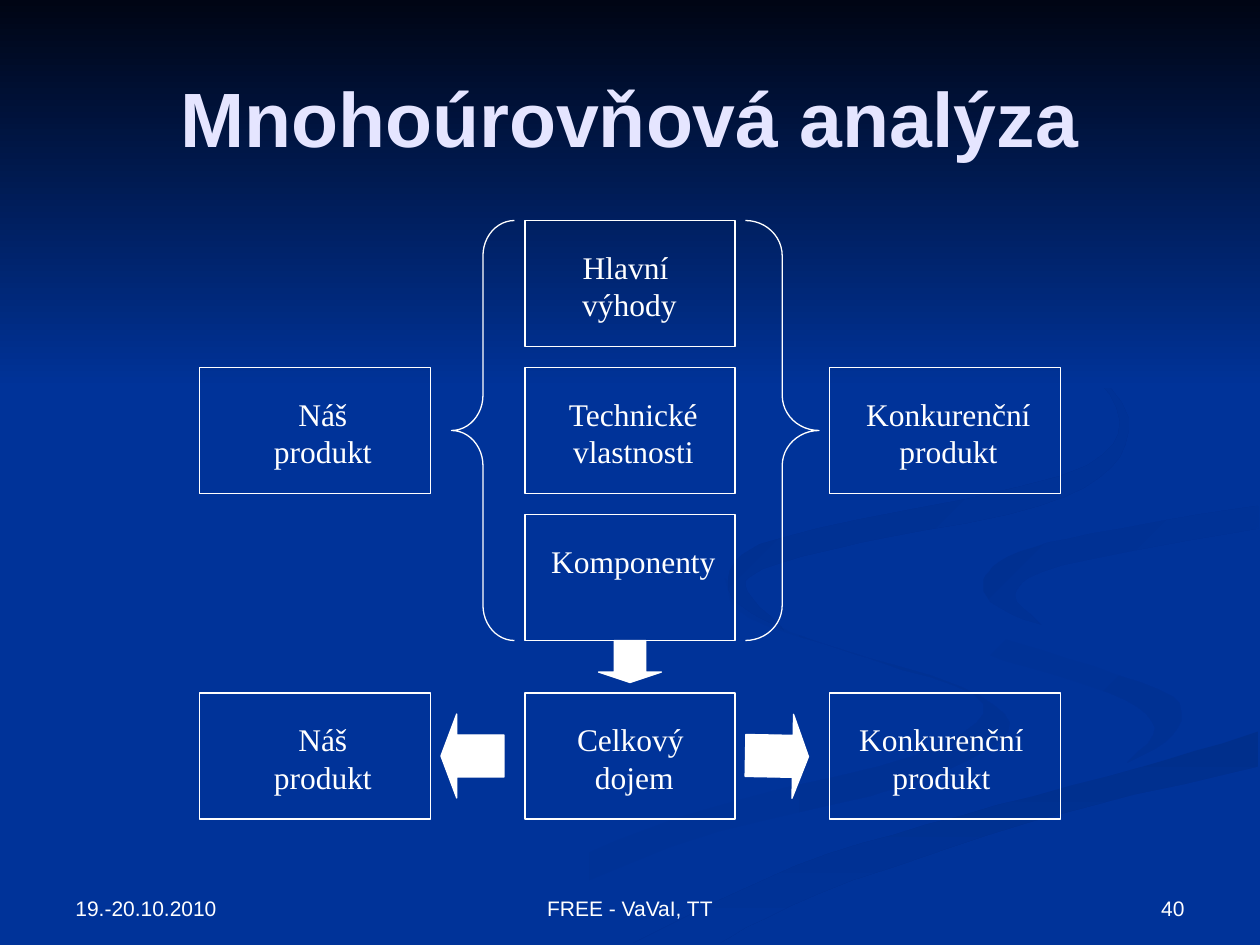
from dataclasses import dataclass

from pptx import Presentation
from pptx.dml.color import RGBColor
from pptx.enum.shapes import MSO_SHAPE
from pptx.enum.text import MSO_ANCHOR, MSO_AUTO_SIZE, PP_ALIGN
from pptx.util import Pt

RECT = MSO_SHAPE.RECTANGLE
LEFT_BRACE, RIGHT_BRACE = MSO_SHAPE.LEFT_BRACE, MSO_SHAPE.RIGHT_BRACE
DOWN_ARROW, LEFT_ARROW = MSO_SHAPE.DOWN_ARROW, MSO_SHAPE.LEFT_ARROW
LEFT, CENTER, RIGHT = PP_ALIGN.LEFT, PP_ALIGN.CENTER, PP_ALIGN.RIGHT
TOP, MIDDLE, BOTTOM = MSO_ANCHOR.TOP, MSO_ANCHOR.MIDDLE, MSO_ANCHOR.BOTTOM
GROW, FIXED = MSO_AUTO_SIZE.SHAPE_TO_FIT_TEXT, MSO_AUTO_SIZE.NONE

COLORS = {"blue": "003399", "night": "000514", "white": "FFFFFF", "title": "E5E5FF",
          "shade1": "003193", "shade2": "002F8C", "shade3": "003091", "shade4": "002F8E"}
LABEL_FONT = {"name": "Times New Roman", "size": Pt(18), "bold": False}
FOOTER_FONT = {"name": "Arial", "size": Pt(12), "bold": False}
TITLE_FONT = {"name": "Arial", "size": Pt(44), "bold": True}
PAGE_WIDTH, PAGE_HEIGHT = 720, 540
SKY_HEIGHT = 222
NODE_HEIGHT = 72
LABEL_DROP, LABEL_WIDTH = 12, 116
CURVE_STEPS = 5

Point = tuple[float, float]


@dataclass
class Ribbon:
    start: str
    end: str
    angle: int
    edges: list[list[Point]]


@dataclass
class Node:
    left: float
    top: float
    width: float
    lines: list[str]
    label_center: float


@dataclass
class Symbol:
    kind: int
    left: float
    top: float
    width: float
    height: float
    adjustments: tuple[float, float]
    filled: bool = True
    rotation: float = 0


@dataclass
class Footer:
    text: str
    left: float
    width: float
    align: int


RIBBONS = [
    Ribbon("blue", "shade1", 0, [
        [(414, 330), (428, 353), (502, 378), (562, 402), (522, 432), (388, 467), (216, 539)],
        [(260, 539), (383, 484), (519, 448), (576, 418), (548, 392), (451, 361), (414, 330)]]),
    Ribbon("blue", "shade1", 45, [
        [(521, 334), (536, 353), (612, 377), (670, 398), (670, 420), (644, 436)],
        [(644, 436), (660, 416), (634, 396), (562, 373), (528, 352), (521, 334)]]),
    Ribbon("shade2", "blue", 90, [
        [(362, 539), (454, 495), (550, 466), (650, 439), (719, 418)],
        [(719, 438), (591, 469), (467, 511), (411, 539)]]),
    Ribbon("shade3", "blue", 45, [
        [(562, 331), (566, 344), (595, 357), (580, 340), (607, 323), (719, 302)],
        [(719, 289), (623, 305), (576, 318), (562, 331)]]),
    Ribbon("shade4", "blue", 45, [
        [(492, 310), (594, 289), (640, 261), (634, 221), (549, 168)],
        [(549, 168), (609, 201), (640, 241), (606, 272), (467, 302), (424, 317), (418, 341),
         (448, 360)],
        [(448, 360), (427, 338), (436, 325), (492, 310)]]),
]
SKY = Ribbon("night", "blue", 90, [[(0, 0), (0, SKY_HEIGHT)], [(PAGE_WIDTH, SKY_HEIGHT), (PAGE_WIDTH, 0)]])

SIDE_LEFT, MIDDLE_LEFT, SIDE_RIGHT = 114, 300, 474
ROWS = (126, 210, 294, 396)
OURS = ["Náš", "produkt"]
RIVAL = ["Konkurenční", "produkt"]
NODES = [
    Node(MIDDLE_LEFT, ROWS[0], 120, ["Hlavní", " výhody"], 357.5),
    Node(MIDDLE_LEFT, ROWS[1], 120, ["Technické", "vlastnosti"], 362),
    Node(MIDDLE_LEFT, ROWS[2], 120, ["Komponenty"], 362),
    Node(MIDDLE_LEFT, ROWS[3], 120, ["Celkový ", "dojem"], 362.5),
    Node(SIDE_LEFT, ROWS[1], 132, OURS, 184.5),
    Node(SIDE_RIGHT, ROWS[1], 132, RIVAL, 542),
    Node(SIDE_LEFT, ROWS[3], 132, OURS, 184.5),
    Node(SIDE_RIGHT, ROWS[3], 132, RIVAL, 538),
]
SYMBOLS = [
    Symbol(RIGHT_BRACE, 426, 126, 42, 240, (0.48, 0.5), False),
    Symbol(LEFT_BRACE, 258, 126, 36, 240, (0.56, 0.5), False),
    Symbol(DOWN_ARROW, 342, 366, 36, 24, (0.5, 0.25)),
    Symbol(LEFT_ARROW, 252, 408, 36, 48, (0.5, 0.25)),
    Symbol(LEFT_ARROW, 426, 408, 36, 48, (0.5, 0.25), rotation=181.1),
]
FOOTERS = [
    Footer("19.-20.10.2010", 36, 168, LEFT),
    Footer("FREE - VaVaI, TT", 246, 228, CENTER),
    Footer("40", 516, 168, RIGHT),
]


def color(name: str) -> RGBColor:
    return RGBColor.from_string(COLORS[name])


def blend(a: float, b: float, c: float, d: float, t: float) -> float:
    return b + t / 2 * (c - a + t * (2 * a - 5 * b + 4 * c - d + t * (3 * (b - c) + d - a)))


def smooth_edge(edge: list[Point]) -> list[Point]:
    padded = [edge[0], *edge, edge[-1]]
    curve = [tuple(blend(*axis, step / CURVE_STEPS) for axis in zip(*padded[i:i + 4]))
             for i in range(len(edge) - 1) for step in range(CURVE_STEPS)]
    return curve + [edge[-1]]


def write(box, lines: list[str], font: dict, ink: str, align: int, frame_format: dict) -> None:
    frame = box.text_frame
    for key, value in frame_format.items():
        setattr(frame, key, value)
    for index, line in enumerate(lines):
        para = frame.add_paragraph() if index else frame.paragraphs[0]
        para.alignment = align
        span = para.add_run()
        span.text = line
        for key, value in font.items():
            setattr(span.font, key, value)
        span.font.color.rgb = color(ink)


def draw_ribbon(page, ribbon: Ribbon) -> None:
    points = [point for edge in ribbon.edges for point in smooth_edge(edge)]
    builder = page.shapes.build_freeform(*points[0], scale=Pt(1))
    builder.add_line_segments(points[1:], close=True)
    shape = builder.convert_to_shape()
    shape.shadow.inherit = False
    shape.line.fill.background()
    shape.fill.gradient()
    shape.fill.gradient_angle = -ribbon.angle % 360
    for stop, name in zip(shape.fill.gradient_stops, (ribbon.start, ribbon.end)):
        stop.color.rgb = color(name)


def draw_symbol(page, symbol: Symbol) -> None:
    shape = page.shapes.add_shape(symbol.kind, Pt(symbol.left), Pt(symbol.top),
                                  Pt(symbol.width), Pt(symbol.height))
    shape.shadow.inherit = False
    shape.rotation = symbol.rotation
    for index, value in enumerate(symbol.adjustments):
        shape.adjustments[index] = value
    shape.line.color.rgb = color("white")
    shape.line.width = Pt(0.75)
    if symbol.filled:
        shape.fill.solid()
        shape.fill.fore_color.rgb = color("white")
    else:
        shape.fill.background()


def draw_node(page, node: Node) -> None:
    draw_symbol(page, Symbol(RECT, node.left, node.top, node.width, NODE_HEIGHT, (), False))
    box = page.shapes.add_textbox(Pt(node.label_center - LABEL_WIDTH / 2), Pt(node.top + LABEL_DROP),
                                  Pt(LABEL_WIDTH), Pt(7.2 + 21.8 * len(node.lines)))
    write(box, node.lines, LABEL_FONT, "white", CENTER,
          {"word_wrap": False, "auto_size": GROW, "vertical_anchor": TOP})


def draw_footer(page, footer: Footer) -> None:
    box = page.shapes.add_textbox(Pt(footer.left), Pt(492), Pt(footer.width), Pt(37.5))
    write(box, [footer.text], FOOTER_FONT, "white", footer.align,
          {"word_wrap": True, "auto_size": FIXED, "vertical_anchor": BOTTOM})


def main() -> None:
    deck = Presentation()
    deck.slide_width, deck.slide_height = Pt(PAGE_WIDTH), Pt(PAGE_HEIGHT)
    page = deck.slides.add_slide(deck.slide_layouts[5])
    page.background.fill.solid()
    page.background.fill.fore_color.rgb = color("blue")
    for ribbon in [*RIBBONS, SKY]:
        draw_ribbon(page, ribbon)
    title = page.shapes.title
    page.shapes._spTree.append(title._element)
    title.left, title.top, title.width, title.height = Pt(36), Pt(21.6), Pt(648), Pt(90)
    write(title, ["Mnohoúrovňová analýza"], TITLE_FONT, "title", CENTER,
          {"word_wrap": True, "auto_size": FIXED, "vertical_anchor": MIDDLE})
    for node in NODES:
        draw_node(page, node)
    for symbol in SYMBOLS:
        draw_symbol(page, symbol)
    for footer in FOOTERS:
        draw_footer(page, footer)
    deck.save("out.pptx")


if __name__ == "__main__":
    main()
